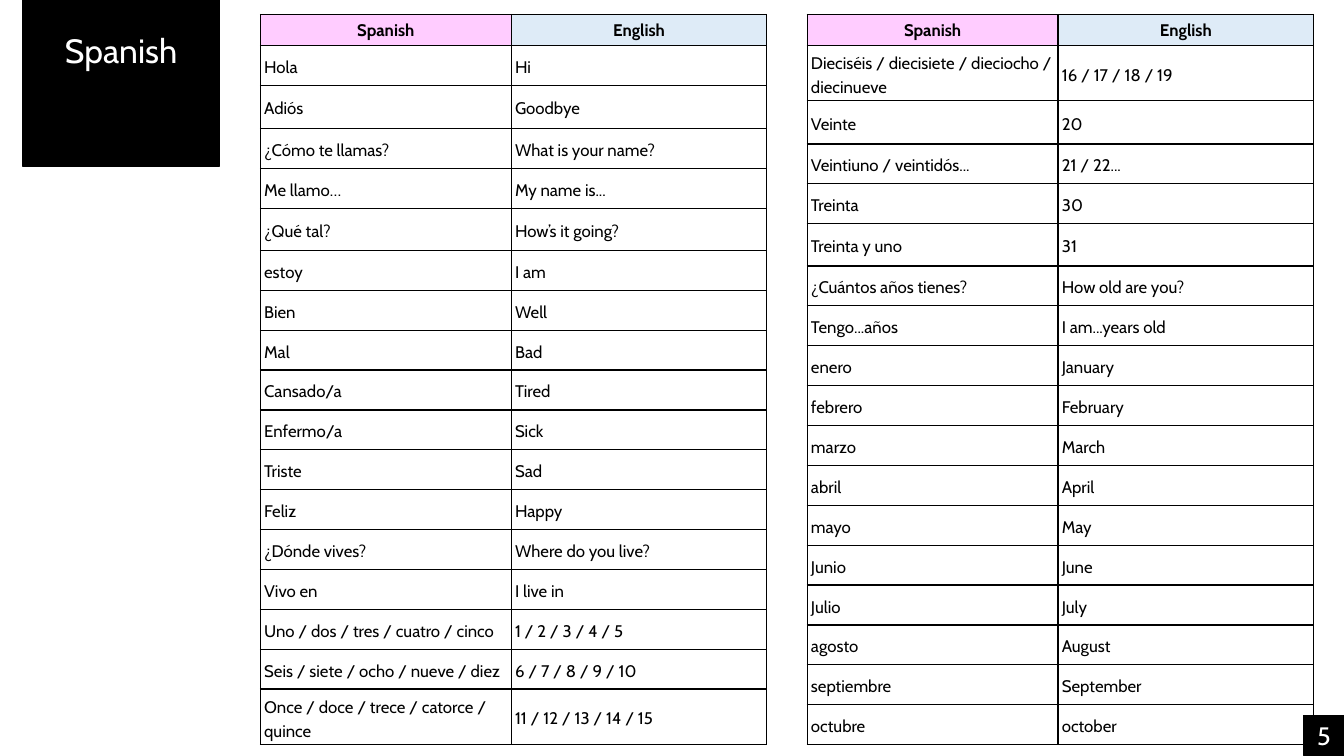
from dataclasses import dataclass
from lxml.etree import SubElement as Sub
from pptx import Presentation
from pptx.dml.color import RGBColor as RGB
from pptx.enum.shapes import MSO_SHAPE as Form
from pptx.enum.text import MSO_ANCHOR as Anchor, MSO_AUTO_SIZE as Auto, PP_ALIGN as Align
from pptx.oxml import parse_xml
from pptx.oxml.ns import nsdecls, qn
from pptx.util import Pt

TITLE, PAGE = "Spanish", "5"
HEADS = ("Spanish", "English")
GREET = [
    ("Hola", "Hi"),
    ("Adiós", "Goodbye"),
    ("¿Cómo te llamas?", "What is your name?"),
    ("Me llamo…", "My name is..."),
    ("¿Qué tal?", "How’s it going?"),
    ("estoy", "I am"),
    ("Bien", "Well"),
    ("Mal", "Bad"),
    ("Cansado/a", "Tired"),
    ("Enfermo/a", "Sick"),
    ("Triste", "Sad"),
    ("Feliz", "Happy"),
    ("¿Dónde vives?", "Where do you live?"),
    ("Vivo en", "I live in"),
    ("Uno / dos / tres / cuatro / cinco", "1 / 2 / 3 / 4 / 5"),
    ("Seis / siete / ocho / nueve / diez", "6 / 7 / 8 / 9 / 10"),
    ("Once / doce / trece / catorce / quince", "11 / 12 / 13 / 14 / 15"),
]
DATES = [
    ("Dieciséis / diecisiete / dieciocho / diecinueve", "16 / 17 / 18 / 19"),
    ("Veinte", "20"),
    ("Veintiuno / veintidós...", "21 / 22..."),
    ("Treinta", "30"),
    ("Treinta y uno", "31"),
    ("¿Cuántos años tienes?", "How old are you?"),
    ("Tengo...años", "I am...years old"),
    ("enero", "January"),
    ("febrero", "February"),
    ("marzo", "March"),
    ("abril", "April"),
    ("mayo", "May"),
    ("Junio", "June"),
    ("Julio", "July"),
    ("agosto", "August"),
    ("septiembre", "September"),
    ("octubre", "october"),
]


@dataclass(frozen=True)
class Theme:
    font: str = "Cabin"
    ink: str = "000000"
    paper: str = "FFFFFF"
    heads: tuple = ("FFCCFF", "DEEBF7")
    title: int = 24
    page: int = 18
    cell: int = 12


LOOK = Theme()
WIDE, HIGH = 960, 540
COLS = (179.2, 182.6)
TOP, LEFT, STEP = 10.4, 186, 390.6
ROW, TALL = 28.5, {0: 22, 2: 30.8, 5: 30.2}
INSET = 2.7


def paint(fill, hue):
    fill.solid()
    fill.fore_color.rgb = RGB.from_string(hue)


def write(par, text, size, hue, bold=False):
    run = par.add_run()
    run.text = text
    font = run.font
    font.name, font.size, font.bold = LOOK.font, Pt(size), bold
    font.color.rgb = RGB.from_string(hue)


def label(box, text, size, edge, area):
    box.left, box.top, box.width, box.height = map(Pt, area)
    paint(box.fill, LOOK.ink)
    paint(box.line.fill, LOOK.ink)
    box.line.width = Pt(edge)
    frame = box.text_frame
    frame.word_wrap = True
    frame.auto_size = Auto.SHAPE_TO_FIT_TEXT
    frame.vertical_anchor = Anchor.MIDDLE
    par = frame.paragraphs[0]
    par.alignment = Align.CENTER
    write(par, text, size, LOOK.paper)


def border(cell):
    props = cell._tc.get_or_add_tcPr()
    for spot, side in enumerate(("lnL", "lnR", "lnT", "lnB")):
        line = parse_xml(f'<a:{side} {nsdecls("a")} w="{Pt(1)}"/>')
        fill = Sub(line, qn("a:solidFill"))
        Sub(fill, qn("a:srgbClr"), val=LOOK.ink)
        props.insert(spot, line)


def fill_cell(cell, text, row, col):
    head = row == 0
    border(cell)
    cell.vertical_anchor = Anchor.MIDDLE
    par = cell.text_frame.paragraphs[0]
    if head:
        paint(cell.fill, LOOK.heads[col])
        par.alignment = Align.CENTER
    else:
        cell.fill.background()
        cell.margin_left = cell.margin_right = Pt(INSET)
        cell.margin_top = cell.margin_bottom = Pt(INSET)
        par.line_spacing, par.space_after = 1.19, Pt(6)
    write(par, text, LOOK.cell, LOOK.ink, head)


def add_words(slide, words, left):
    rows = [HEADS, *words]
    highs = [TALL.get(n, ROW) for n in range(len(rows))]
    area = map(Pt, (left, TOP, sum(COLS), sum(highs)))
    grid = slide.shapes.add_table(len(rows), len(COLS), *area).table
    grid.horz_banding = False
    for col, wide in zip(grid.columns, COLS):
        col.width = Pt(wide)
    for n, (pair, high) in enumerate(zip(rows, highs)):
        grid.rows[n].height = Pt(high)
        for col, text in enumerate(pair):
            fill_cell(grid.cell(n, col), text, n, col)


def main():
    deck = Presentation()
    deck.slide_width, deck.slide_height = Pt(WIDE), Pt(HIGH)
    slide = deck.slides.add_slide(deck.slide_layouts[5])
    paint(slide.background.fill, LOOK.paper)
    label(slide.shapes.title, TITLE, LOOK.title, 1, (16.2, 17.7, 140.6, 36.35))
    side = 29.08
    area = (931.4, HIGH - side, 28.6, side)
    page = slide.shapes.add_shape(Form.RECTANGLE, *map(Pt, area))
    page.shadow.inherit = False
    label(page, PAGE, LOOK.page, 0.75, area)
    for n, words in enumerate((GREET, DATES)):
        add_words(slide, words, LEFT + n * STEP)
    deck.save("out.pptx")


if __name__ == "__main__":
    main()
